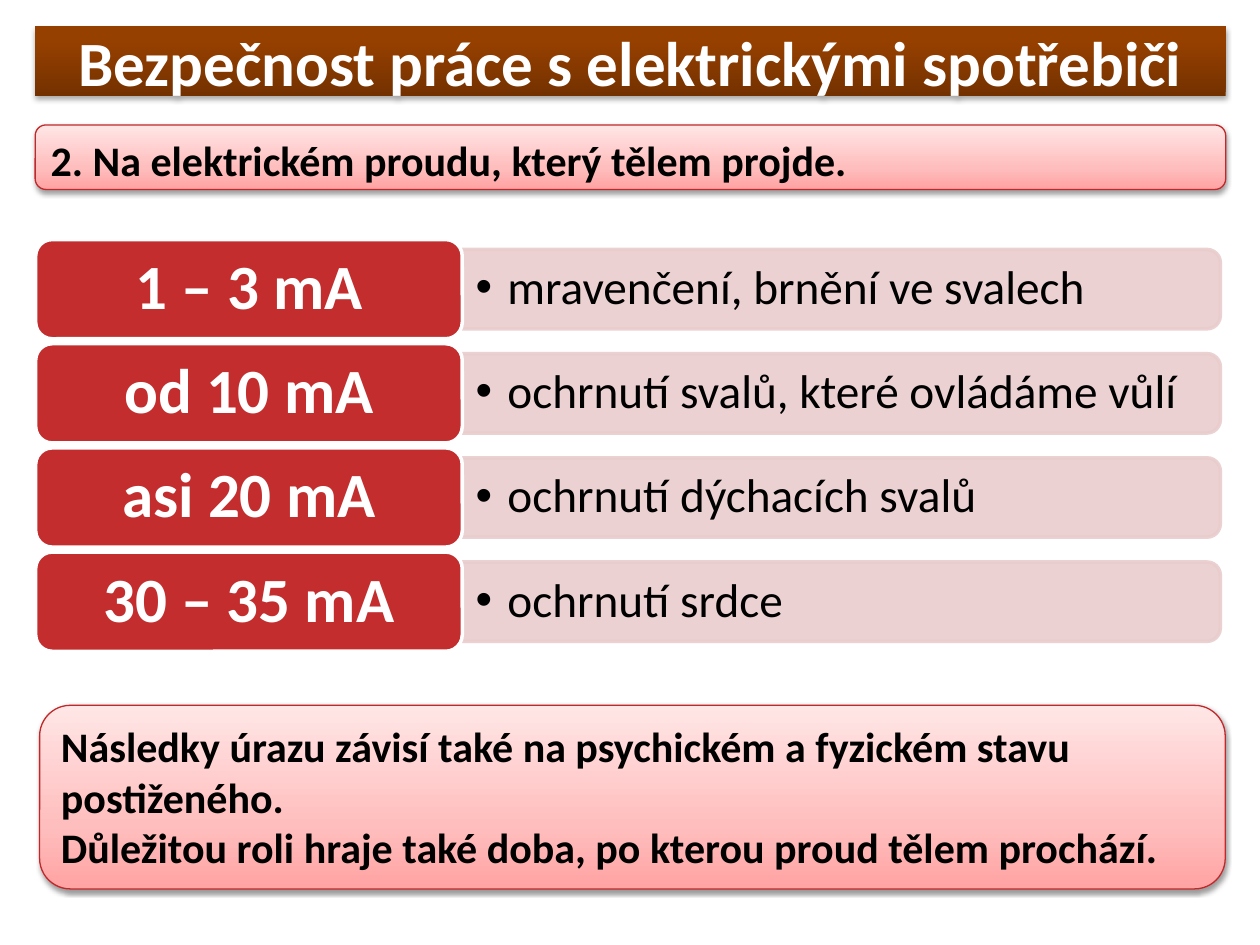
from copy import deepcopy

from lxml import etree
from pptx import Presentation
from pptx import util as u
from pptx.dml.color import RGBColor
from pptx.enum import shapes, text
from pptx.oxml.ns import qn

FONT = "Calibri"
COLORS = {
    "white": "FFFFFF",
    "black": "000000",
    "red": "C32D2E",
    "outline": "C22829",
    "bar": "E9CDCD",
}
BROWN_STOPS = [(0, "743100"), (0.8, "964000"), (1, "974100")]
PINK_STOPS = [(0, "FFA3A3"), (0.35, "FFBEBE"), (1, "FFE6E6")]

EFFECTS = [
    ("1 – 3 mA", "mravenčení, brnění ve svalech"),
    ("od 10 mA", "ochrnutí svalů, které ovládáme vůlí"),
    ("asi 20 mA", "ochrnutí dýchacích svalů"),
    ("30 – 35 mA", "ochrnutí srdce"),
]
FIRST_ROW_CENTER, ROW_PITCH = 5.83, 2.1
LABEL_LEFT, LABEL_WIDTH, LABEL_HEIGHT = 0.72, 8.6, 2.0
BAR_LEFT, BAR_WIDTH, BAR_HEIGHT = 9.31, 15.29, 1.6


def rgb(name):
    return RGBColor.from_string(COLORS[name])


def set_gradient(shape, stops):
    """Fill the shape with colour stops that run from bottom to top."""
    fill = shape.fill
    fill.gradient()
    fill.gradient_angle = 90
    stop_list = shape._element.spPr.find(".//" + qn("a:gsLst"))
    while len(stop_list) < len(stops):
        stop_list.append(deepcopy(stop_list[0]))
    for stop, (position, color) in zip(fill.gradient_stops, stops):
        stop.position = position
        stop.color.rgb = RGBColor.from_string(color)


def set_shadow(shape, distance, opacity):
    shape.shadow.inherit = False
    effects = shape._element.spPr.find(qn("a:effectLst"))
    shadow = etree.SubElement(
        effects, qn("a:outerShdw"), blurRad=str(u.Pt(3.1)),
        dist=str(u.Pt(distance)), dir="5400000", rotWithShape="0")
    color = etree.SubElement(shadow, qn("a:srgbClr"), val=COLORS["black"])
    etree.SubElement(color, qn("a:alpha"), val=str(opacity * 1000))


def set_outline(shape, color, width):
    shape.line.color.rgb = rgb(color)
    shape.line.width = u.Pt(width)


def set_frame(frame, anchor, side=0.25, edge=0.13):
    frame.word_wrap = True
    frame.auto_size = text.MSO_AUTO_SIZE.NONE
    frame.vertical_anchor = anchor
    frame.margin_left = frame.margin_right = u.Cm(side)
    frame.margin_top = frame.margin_bottom = u.Cm(edge)


def write(paragraph, words, size, color, bold=True,
          align=text.PP_ALIGN.LEFT, spacing=None):
    paragraph.alignment = align
    paragraph.line_spacing = spacing
    run = paragraph.add_run()
    run.text = words
    run.font.name = FONT
    run.font.size = u.Pt(size)
    run.font.bold = bold
    run.font.color.rgb = rgb(color)


def add_bullet(paragraph):
    indent = u.Cm(0.64)
    properties = paragraph._p.get_or_add_pPr()
    properties.set("marL", str(indent))
    properties.set("indent", str(-indent))
    etree.SubElement(properties, qn("a:buFont"), typeface="Arial")
    etree.SubElement(properties, qn("a:buChar"), char="•")


def set_title(slide, words):
    title = slide.shapes.title
    title.left, title.top = u.Cm(0.71), u.Cm(0.53)
    title.width, title.height = u.Cm(24), u.Cm(1.4)
    set_gradient(title, BROWN_STOPS)
    set_shadow(title, 1.8, 35)
    set_frame(title.text_frame, text.MSO_ANCHOR.MIDDLE)
    write(title.text_frame.paragraphs[0], words, 36, "white",
          align=text.PP_ALIGN.CENTER)


def add_pink_box(slide, left, top, width, height, lines):
    box = slide.shapes.add_shape(
        shapes.MSO_SHAPE.ROUNDED_RECTANGLE,
        u.Cm(left), u.Cm(top), u.Cm(width), u.Cm(height))
    set_gradient(box, PINK_STOPS)
    set_outline(box, "outline", 0.75)
    set_shadow(box, 1.6, 38)
    frame = box.text_frame
    set_frame(frame, text.MSO_ANCHOR.TOP)
    for index, line in enumerate(lines):
        paragraph = frame.add_paragraph() if index else frame.paragraphs[0]
        write(paragraph, line, 24, "black")


def add_bar(slide, center):
    """Draw a bar, turned so that its two rounded corners are on the right."""
    middle = BAR_LEFT + BAR_WIDTH / 2
    bar = slide.shapes.add_shape(
        shapes.MSO_SHAPE.ROUND_2_SAME_RECTANGLE,
        u.Cm(middle - BAR_HEIGHT / 2), u.Cm(center - BAR_WIDTH / 2),
        u.Cm(BAR_HEIGHT), u.Cm(BAR_WIDTH))
    bar.rotation = 90
    bar.shadow.inherit = False
    bar.fill.solid()
    bar.fill.fore_color.rgb = rgb("bar")
    set_outline(bar, "bar", 2)
    for color in bar._element.spPr.iter(qn("a:srgbClr")):
        etree.SubElement(color, qn("a:alpha"), val="90000")


def add_description(slide, center, words):
    height = 1.45
    box = slide.shapes.add_textbox(
        u.Cm(BAR_LEFT), u.Cm(center - height / 2), u.Cm(15.21), u.Cm(height))
    set_frame(box.text_frame, text.MSO_ANCHOR.MIDDLE, 0.28, 0.15)
    paragraph = box.text_frame.paragraphs[0]
    write(paragraph, words, 27, "black", bold=False, spacing=0.9)
    add_bullet(paragraph)


def add_label(slide, center, words):
    label = slide.shapes.add_shape(
        shapes.MSO_SHAPE.ROUNDED_RECTANGLE,
        u.Cm(LABEL_LEFT), u.Cm(center - LABEL_HEIGHT / 2),
        u.Cm(LABEL_WIDTH), u.Cm(LABEL_HEIGHT))
    label.shadow.inherit = False
    label.fill.solid()
    label.fill.fore_color.rgb = rgb("red")
    set_outline(label, "white", 2)
    set_frame(label.text_frame, text.MSO_ANCHOR.MIDDLE, 0.38, 0.18)
    write(label.text_frame.paragraphs[0], words, 36, "white",
          align=text.PP_ALIGN.CENTER, spacing=0.9)


def main():
    presentation = Presentation()
    presentation.slide_width, presentation.slide_height = u.Cm(25.4), u.Cm(19.05)
    slide = presentation.slides.add_slide(presentation.slide_layouts[5])

    set_title(slide, "Bezpečnost práce s elektrickými spotřebiči")
    add_pink_box(slide, 0.71, 2.52, 24, 1.3,
                 ["2. Na elektrickém proudu, který tělem projde."])
    add_pink_box(slide, 0.8, 14.22, 23.9, 3.7, [
        "Následky úrazu závisí také na psychickém a fyzickém stavu postiženého.",
        "Důležitou roli hraje také doba, po kterou proud tělem prochází.",
    ])
    for row, (current, effect) in enumerate(EFFECTS):
        center = FIRST_ROW_CENTER + row * ROW_PITCH
        add_bar(slide, center)
        add_description(slide, center, effect)
        add_label(slide, center, current)

    presentation.save("out.pptx")


if __name__ == "__main__":
    main()
